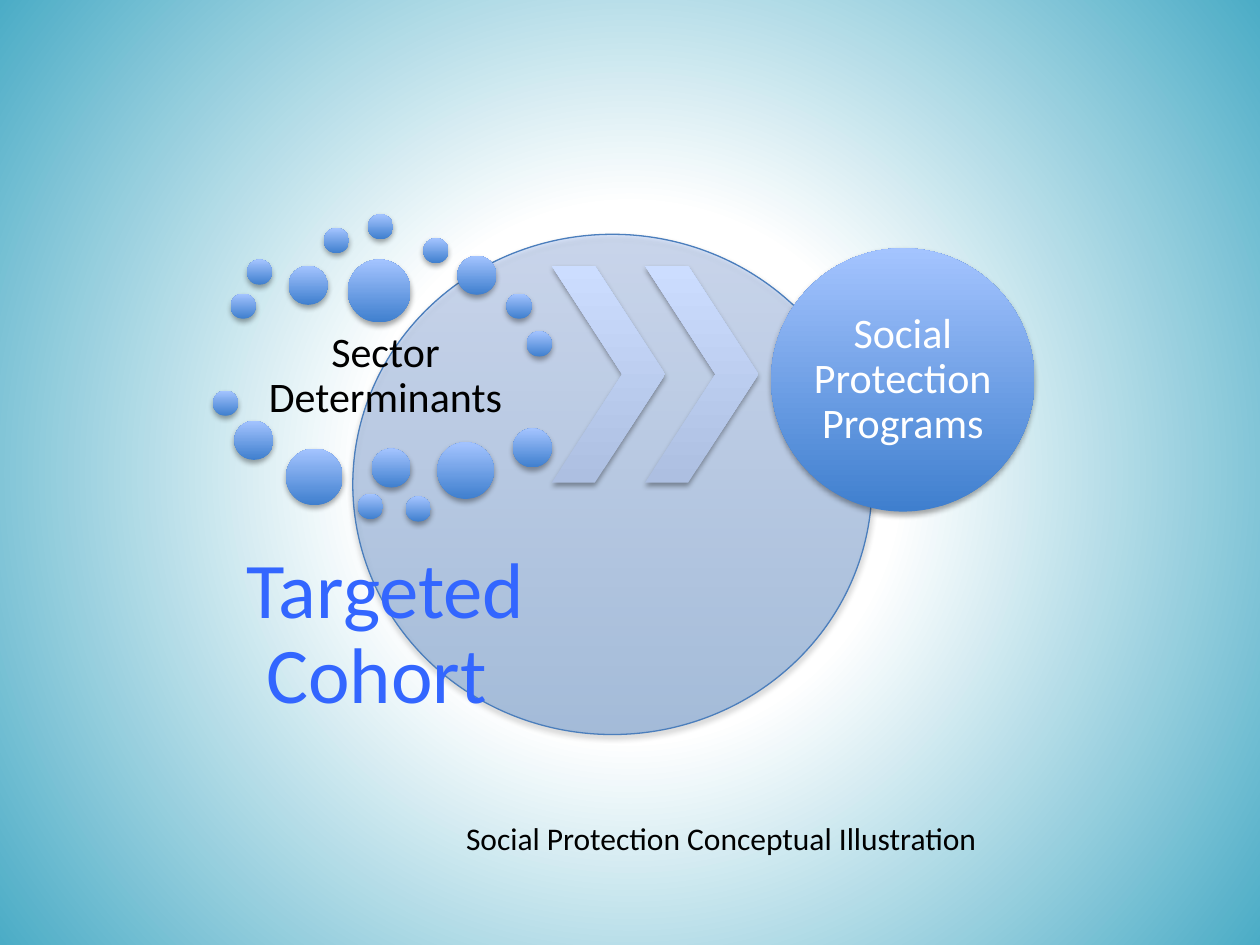
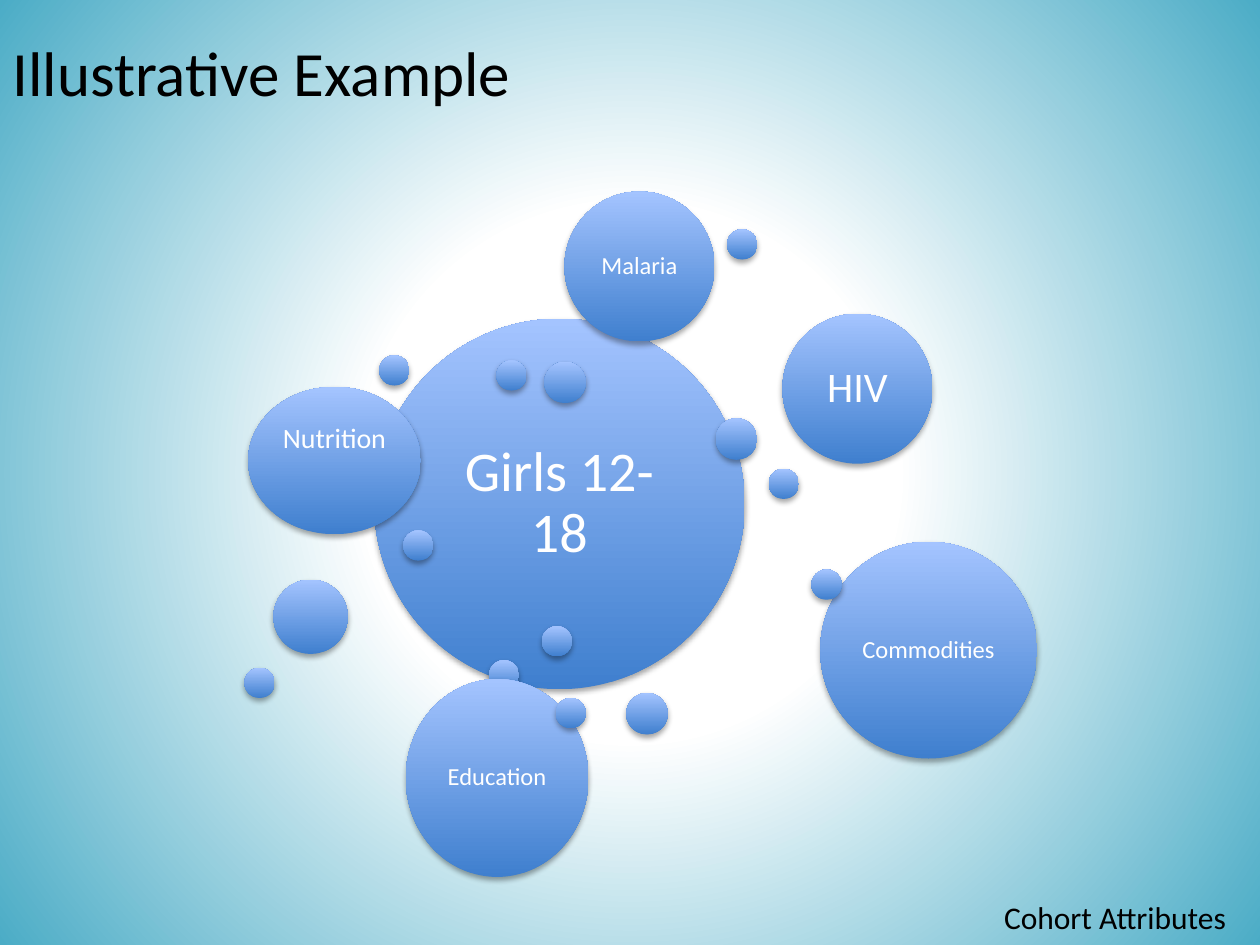
from pptx import Presentation
from pptx.dml.color import RGBColor
from pptx.enum.shapes import MSO_SHAPE
from pptx.enum.text import MSO_ANCHOR, MSO_AUTO_SIZE, PP_ALIGN
from pptx.oxml import parse_xml
from pptx.oxml.ns import qn
from pptx.util import Inches, Pt
from lxml.etree import SubElement

FONT = "Calibri"
BLACK = RGBColor(0x00, 0x00, 0x00)
WHITE = RGBColor(0xFF, 0xFF, 0xFF)
TEAL = RGBColor(0x4B, 0xAC, 0xC6)
COHORT_BLUE = RGBColor(0x33, 0x66, 0xFF)
BUBBLE_DARK = RGBColor(0x3F, 0x7F, 0xCE)
BUBBLE_LIGHT = RGBColor(0xA4, 0xC4, 0xFF)
CHEVRON_DARK = RGBColor(0xAD, 0xBF, 0xE1)
CHEVRON_LIGHT = RGBColor(0xCC, 0xDD, 0xFF)
OUTLINE = RGBColor(0x4B, 0x7E, 0xBC)
DRAWING_NS = "http://schemas.openxmlformats.org/drawingml/2006/main"

SMALL, MEDIUM, LARGE = 0.2, 0.31, 0.45
SECTOR_DOTS = [
    (1.83, 2.33, SMALL), (1.96, 2.06, SMALL), (2.29, 2.11, MEDIUM),
    (2.57, 1.81, SMALL), (2.92, 1.7, SMALL), (3.36, 1.89, SMALL),
    (3.63, 2.03, MEDIUM), (4.02, 2.33, SMALL), (4.18, 2.63, SMALL),
    (2.76, 2.06, 0.5), (1.69, 3.1, SMALL), (1.86, 3.34, MEDIUM),
    (2.27, 3.56, LARGE), (2.84, 3.92, SMALL), (2.95, 3.56, MEDIUM),
    (3.22, 3.94, SMALL), (3.47, 3.51, LARGE), (4.07, 3.4, MEDIUM),
]

DOT, BIG_DOT = 0.24, 0.33
DOTS_BEHIND_NUTRITION = [
    (3.88, 5.24, DOT), (6.1, 3.72, DOT), (4.97, 5.5, BIG_DOT),
    (3.94, 2.86, DOT), (3.2, 4.21, DOT),
]
DOTS_AROUND_GIRLS = [
    (4.32, 2.87, BIG_DOT), (2.17, 4.6, 0.59), (5.68, 3.32, BIG_DOT),
    (1.94, 5.3, DOT), (4.3, 4.97, DOT),
]
DOTS_IN_FRONT = [(6.44, 4.52, DOT), (4.41, 5.54, DOT), (3.01, 2.82, DOT), (5.77, 1.82, DOT)]


def add_page(deck):
    page = deck.slides.add_slide(deck.slide_layouts[6])
    page.background.fill.gradient()
    stops = "".join(
        f'<a:gs pos="{position * 1000}"><a:srgbClr val="{color}"/></a:gs>'
        for position, color in ((0, WHITE), (34, WHITE), (100, TEAL))
    )
    glow = parse_xml(
        f'<a:gradFill xmlns:a="{DRAWING_NS}" rotWithShape="1"><a:gsLst>{stops}</a:gsLst>'
        '<a:path path="circle"><a:fillToRect l="50000" t="50000" r="50000" b="50000"/>'
        "</a:path></a:gradFill>"
    )
    plain = next(page.element.iter(qn("a:gradFill")))
    plain.getparent().replace(plain, glow)
    return page


def add_shadow(shape):
    shape.shadow.inherit = False
    effects = shape.element.spPr.find(qn("a:effectLst"))
    shadow = SubElement(effects, qn("a:outerShdw"), blurRad="40000", dist="23000",
                        dir="5400000", rotWithShape="0")
    color = SubElement(shadow, qn("a:srgbClr"), val=str(BLACK))
    SubElement(color, qn("a:alpha"), val="35000")


def add_gradient_shape(page, kind, left, top, width, height, dark, light, opacity=100):
    shape = page.shapes.add_shape(kind, Inches(left), Inches(top), Inches(width), Inches(height))
    shape.fill.gradient()
    shape.fill.gradient_angle = 90
    for stop, position, color in zip(shape.fill.gradient_stops, (0, 1), (dark, light)):
        stop.position = position
        stop.color.rgb = color
    if opacity < 100:
        for color in shape.element.spPr.iter(qn("a:srgbClr")):
            SubElement(color, qn("a:alpha"), val=str(opacity * 1000))
    shape.line.fill.background()
    add_shadow(shape)
    return shape


def write(box, text, size, color, inset, align=PP_ALIGN.CENTER, bottom=None):
    frame = box.text_frame
    frame.text = text
    frame.word_wrap = True
    frame.vertical_anchor = MSO_ANCHOR.MIDDLE
    frame.margin_left = frame.margin_right = frame.margin_top = Inches(inset)
    frame.margin_bottom = Inches(inset if bottom is None else bottom)
    para = frame.paragraphs[0]
    para.alignment = align
    para.line_spacing = 0.9
    font = para.runs[0].font
    font.name, font.size, font.color.rgb = FONT, Pt(size), color


def add_bubble(page, left, top, width, height=None, label=None, size=14, inset=0.06, bottom=None):
    bubble = add_gradient_shape(page, MSO_SHAPE.OVAL, left, top, width, height or width,
                                BUBBLE_DARK, BUBBLE_LIGHT)
    if label:
        write(bubble, label, size, WHITE, inset, bottom=bottom)


def add_dots(page, dots):
    for left, top, diameter in dots:
        add_bubble(page, left, top, diameter)


def add_label(page, text, left, top, width, height, size, color, inset):
    box = page.shapes.add_textbox(Inches(left), Inches(top), Inches(width), Inches(height))
    write(box, text, size, color, inset)


def add_caption(page, text, left, top, width, height, size=18, wrap=False):
    box = page.shapes.add_textbox(Inches(left), Inches(top), Inches(width), Inches(height))
    frame = box.text_frame
    frame.text = text
    frame.word_wrap = wrap
    frame.auto_size = MSO_AUTO_SIZE.SHAPE_TO_FIT_TEXT
    font = frame.paragraphs[0].runs[0].font
    font.name, font.size, font.color.rgb = FONT, Pt(size), BLACK


def build_concept(deck):
    page = add_page(deck)
    backdrop = add_gradient_shape(page, MSO_SHAPE.OVAL, 2.8, 1.86, 4.12, 3.97,
                                  BUBBLE_DARK, BUBBLE_LIGHT, opacity=36)
    backdrop.line.color.rgb = OUTLINE
    backdrop.line.width = Pt(0.75)
    add_label(page, "Sector Determinants", 1.83, 2.58, 2.46, 0.81, 24, BLACK, 0.03)
    add_label(page, "Targeted Cohort ", 1.83, 4.28, 2.46, 1.52, 45, COHORT_BLUE, 0.06)
    add_dots(page, SECTOR_DOTS)
    for left in (4.38, 5.12):
        chevron = add_gradient_shape(page, MSO_SHAPE.CHEVRON, left, 2.11, 0.9, 1.72,
                                     CHEVRON_DARK, CHEVRON_LIGHT)
        chevron.adjustments[0] = 0.62
    add_bubble(page, 6.12, 1.97, 2.09, label="Social Protection Programs", size=24, inset=0)
    add_caption(page, "Social Protection Conceptual Illustration", 3.6, 6.45, 4.31, 0.4)


def build_example(deck):
    page = add_page(deck)
    add_bubble(page, 2.97, 2.53, 2.94, label="Girls 12-18", size=32, inset=0.13)
    add_dots(page, DOTS_BEHIND_NUTRITION)
    add_bubble(page, 1.97, 3.07, 1.37, 1.17, "Nutrition", 16, 0.07, bottom=0.4)
    add_dots(page, DOTS_AROUND_GIRLS)
    add_bubble(page, 6.21, 2.49, 1.19, label="HIV", size=24, inset=0.1)
    add_bubble(page, 6.51, 4.3, 1.72, label="Commodities")
    add_bubble(page, 3.22, 5.39, 1.45, 1.57, "Education")
    add_bubble(page, 4.48, 1.52, 1.19, label="Malaria")
    add_dots(page, DOTS_IN_FRONT)
    add_caption(page, "Cohort Attributes", 7.87, 7.08, 2.02, 0.4, wrap=True)
    add_caption(page, "Illustrative Example", 0, 0.22, 4.35, 0.71, size=36)


def main():
    deck = Presentation()
    deck.slide_width = Inches(10)
    deck.slide_height = Inches(7.5)
    build_concept(deck)
    build_example(deck)
    deck.save("out.pptx")


if __name__ == "__main__":
    main()
